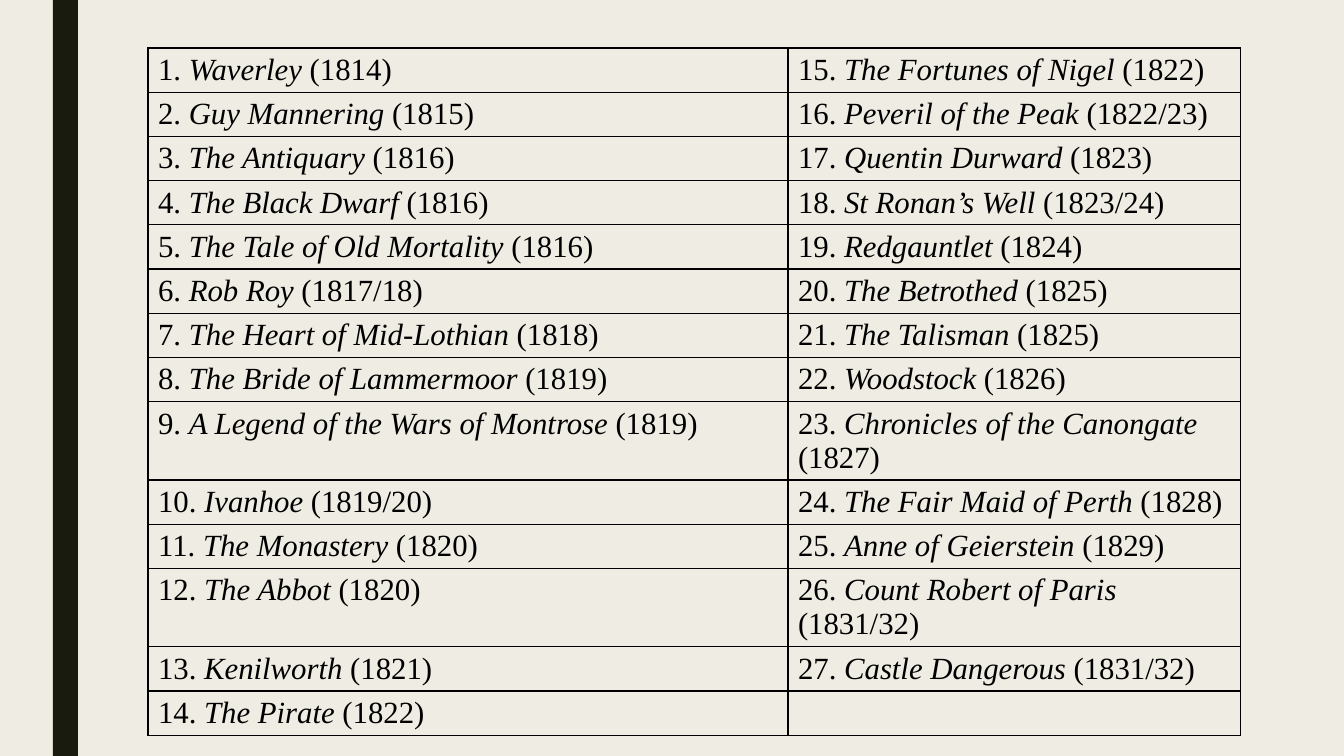
from lxml.etree import SubElement
from pptx import Presentation
from pptx.dml.color import RGBColor
from pptx.enum.shapes import MSO_SHAPE
from pptx.oxml.ns import qn
from pptx.util import Pt

EMU_PER_PX = 914400 / 100.8
SLIDE_WIDTH, SLIDE_HEIGHT = 1344, 756
PAPER, BAR, INK = "EFEDE3", "191B0E", "000000"

NOVELS = [
    ("Waverley", "1814"),
    ("Guy Mannering", "1815"),
    ("The Antiquary", "1816"),
    ("The Black Dwarf", "1816"),
    ("The Tale of Old Mortality", "1816"),
    ("Rob Roy", "1817/18"),
    ("The Heart of Mid-Lothian", "1818"),
    ("The Bride of Lammermoor", "1819"),
    ("A Legend of the Wars of Montrose", "1819"),
    ("Ivanhoe", "1819/20"),
    ("The Monastery", "1820"),
    ("The Abbot", "1820"),
    ("Kenilworth", "1821"),
    ("The Pirate", "1822"),
    ("The Fortunes of Nigel", "1822"),
    ("Peveril of the Peak", "1822/23"),
    ("Quentin Durward", "1823"),
    ("St Ronan’s Well", "1823/24"),
    ("Redgauntlet", "1824"),
    ("The Betrothed", "1825"),
    ("The Talisman", "1825"),
    ("Woodstock", "1826"),
    ("Chronicles of the Canongate", "1827"),
    ("The Fair Maid of Perth", "1828"),
    ("Anne of Geierstein", "1829"),
    ("Count Robert of Paris", "1831/32"),
    ("Castle Dangerous", "1831/32"),
]
ROW_COUNT = 14
ROW_HEIGHT = 41
COLUMN_WIDTHS = (640, 453)


def px(length):
    return round(length * EMU_PER_PX)


def color(hex_string):
    return RGBColor.from_string(hex_string)


def add_side_bar(slide, left, top, width, height):
    bar = slide.shapes.add_shape(MSO_SHAPE.RECTANGLE, px(left), px(top), px(width), px(height))
    bar.shadow.inherit = False
    bar.fill.solid()
    bar.fill.fore_color.rgb = color(BAR)
    bar.line.fill.background()


def frame_cell(cell):
    """Give the cell a thin line on all four sides and no fill."""
    properties = cell._tc.get_or_add_tcPr()
    for side in ("a:lnL", "a:lnR", "a:lnT", "a:lnB"):
        border = SubElement(properties, qn(side), w=str(Pt(1)))
        SubElement(SubElement(border, qn("a:solidFill")), qn("a:srgbClr"), val=INK)
    cell.fill.background()


def write_novel(cell, number, title, year):
    paragraph = cell.text_frame.paragraphs[0]
    for text, italic in ((f"{number}. ", False), (title, True), (f" ({year})", False)):
        run = paragraph.add_run()
        run.text = text
        run.font.color.rgb = color(INK)
        font_format = {"name": "Times New Roman", "size": Pt(22), "italic": italic}
        for attribute, value in font_format.items():
            setattr(run.font, attribute, value)


def add_novel_table(slide, left, top):
    """Fill the table down the first column, then down the second."""
    novel_table = slide.shapes.add_table(
        ROW_COUNT, len(COLUMN_WIDTHS), px(left), px(top),
        px(sum(COLUMN_WIDTHS)), px(ROW_COUNT * ROW_HEIGHT)).table
    novel_table.first_row = novel_table.horz_banding = False
    for column, width in zip(novel_table.columns, COLUMN_WIDTHS):
        column.width = px(width)
    for row in novel_table.rows:
        row.height = px(ROW_HEIGHT)
    for cell in novel_table.iter_cells():
        frame_cell(cell)
    for index, (title, year) in enumerate(NOVELS):
        column, row = divmod(index, ROW_COUNT)
        write_novel(novel_table.cell(row, column), index + 1, title, year)


def add_novels_slide(deck):
    slide = deck.slides.add_slide(deck.slide_layouts[6])
    slide.background.fill.solid()
    slide.background.fill.fore_color.rgb = color(PAPER)
    add_side_bar(slide, 53, 0, 25, SLIDE_HEIGHT)
    add_novel_table(slide, 148, 48)


def main():
    deck = Presentation()
    deck.slide_width, deck.slide_height = px(SLIDE_WIDTH), px(SLIDE_HEIGHT)
    add_novels_slide(deck)
    deck.save("out.pptx")


if __name__ == "__main__":
    main()
